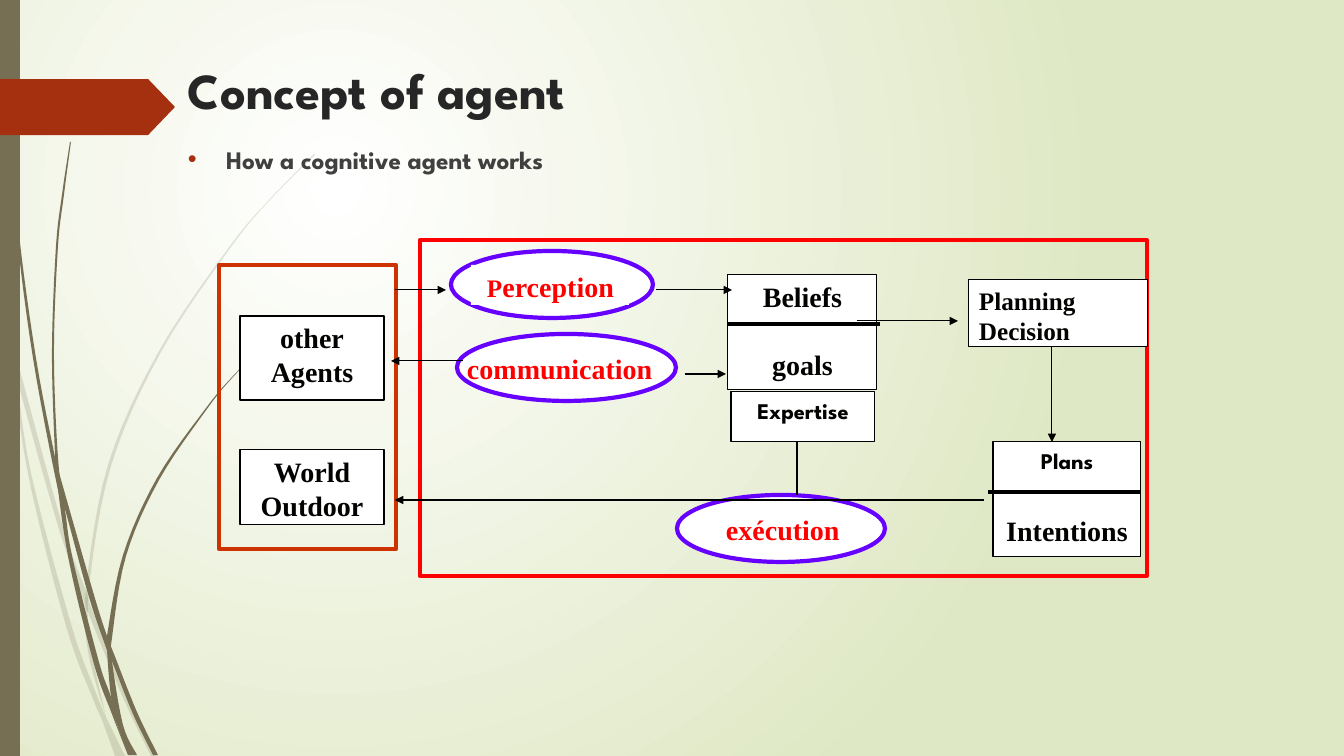
from lxml import etree
from pptx import Presentation
from pptx.dml.color import RGBColor
from pptx.enum.dml import MSO_THEME_COLOR
from pptx.enum.shapes import MSO_CONNECTOR, MSO_SHAPE
from pptx.enum.text import PP_ALIGN
from pptx.oxml.ns import qn
from pptx.util import Pt

RECT, OVAL, ARROW_TAB = MSO_SHAPE.RECTANGLE, MSO_SHAPE.OVAL, MSO_SHAPE.PENTAGON
STRAIGHT = MSO_CONNECTOR.STRAIGHT
LEFT, CENTER = PP_ALIGN.LEFT, PP_ALIGN.CENTER
PX = 914400 / 100.8
W, H = 1344, 756

SPARTAN, TIMES = "League Spartan", "Times New Roman"
THEME = {
    "colors": {
        "white": "FFFFFF", "sage": "DFE8C4", "olive": "766F54", "rust": "A53010",
        "title": "262626", "body": "404040", "ink": "020200", "black": "000000",
        "red": "FF0000", "orange": "CC3300", "violet": "6600FF",
    },
    "text": {  # font, points, colour
        "title": (SPARTAN, 36, "title"), "body": (SPARTAN, 18, "body"),
        "label": (SPARTAN, 16, "ink"), "node": (TIMES, 20, "ink"),
        "small": (TIMES, 18, "ink"), "action": (TIMES, 20, "red"),
        "initial": (TIMES, 18, "red"),
    },
    "thin": 0.75, "thick": 3,
}

# Grass blades: transparency-bearing opacity, then left and right edges
BLADES = [
    (20, [(0, 284), (9, 325), (14, 348), (62, 524), (86, 591), (93, 612), (128, 698), (156, 756)],
         [(0, 301), (10, 347), (17, 379), (58, 526), (85, 604), (89, 615), (124, 700), (151, 756)]),
    (20, [(11, 353), (28, 474), (66, 626), (93, 699), (102, 720), (115, 756)],
         [(17, 379), (31, 473), (71, 624), (94, 688), (106, 717), (125, 756)]),
    (20, [(314, 154), (270, 199), (230, 246), (159, 351), (108, 465), (86, 589), (88, 651), (106, 717)],
         [(315, 155), (270, 200), (231, 247), (161, 352), (111, 466), (89, 589), (92, 651), (106, 717)]),
    (100, [(3, 0), (4, 48), (7, 111), (17, 235), (33, 358), (57, 485), (65, 509), (89, 597), (107, 650),
           (112, 661), (133, 714), (153, 755)],
          [(4, 0), (5, 48), (8, 110), (19, 234), (36, 358), (55, 457), (60, 476), (94, 595), (107, 636),
           (114, 654), (137, 712), (158, 755)]),
    (100, [(70, 142), (62, 195), (56, 247), (52, 352), (55, 453), (57, 481), (69, 561), (94, 664),
           (112, 714), (128, 755)],
          [(71, 142), (64, 195), (58, 247), (54, 352), (58, 457), (65, 509), (73, 560), (99, 662),
           (111, 697), (118, 728), (132, 755)]),
    (100, [(262, 347), (233, 376), (206, 408), (157, 478), (123, 555), (107, 636), (107, 650), (111, 697),
           (118, 728), (131, 755)],
          [(263, 347), (233, 377), (207, 409), (159, 480), (126, 556), (112, 638), (112, 661), (123, 725),
           (137, 755)]),
]

# Preset, left, top, width, height, fill, line, line weight
BARE = [
    (RECT, 0, 0, 20, 756, "olive", None, None),
    (ARROW_TAB, 0, 79, 175, 56, "rust", None, None),
    (RECT, 420, 240, 727, 336, None, "red", "thick"),
    (RECT, 219, 265, 177, 284, None, "orange", "thick"),
    (OVAL, 451, 251, 202, 67, "white", "violet", "thick"),
    (OVAL, 457, 334, 219, 67, "white", "violet", "thick"),
    (OVAL, 677, 495, 208, 67, "white", "violet", "thick"),
]

# Left, top, width, height, left inset, fill, line, alignment,
# paragraphs of (points before, [(text, style)])
WORDED = [
    (178, 54, 983, 141, 10, None, None, LEFT, [(0, [("Concept of agent", "title")])]),
    (178, 139, 1101, 617, 10, None, None, LEFT, [(10, [("How a cognitive agent works", "body")])]),
    (471, 265, 158, 40, 16, "white", None, LEFT,
     [(0, [("P", "initial"), ("erception", "action")])]),
    (457, 347, 219, 40, 10, None, None, LEFT, [(0, [("communication", "action")])]),
    (711, 508, 140, 40, 15, "white", None, LEFT, [(0, [("exécution", "action")])]),
    (969, 280, 179, 67, 10, "white", "black", LEFT,
     [(0, [("Planning", "small")]), (0, [("Decision", "small")])]),
    (728, 275, 149, 115, 10, "white", "black", CENTER,
     [(0, [("Beliefs", "node")]), (24, [("goals", "node")])]),
    (993, 442, 148, 115, 10, "white", "black", CENTER,
     [(0, [("Plans", "label")]), (28, [("Intentions", "node")])]),
    (731, 392, 144, 50, 10, "white", "black", CENTER, [(0, [("Expertise", "label")])]),
    (240, 316, 144, 84, 10, "white", "black", CENTER,
     [(0, [("other", "node")]), (0, [("Agents", "node")])]),
    (240, 450, 144, 75, 10, "white", "black", CENTER,
     [(0, [("World", "node")]), (0, [("Outdoor", "node")])]),
]

# From x, from y, to x, to y, weight, arrowhead at the end
LINKS = [
    (797, 442, 797, 495, "thin", False),
    (857, 321, 958, 321, "thin", True),
    (463, 361, 391, 361, "thin", True),
    (1052, 347, 1052, 442, "thin", True),
    (685, 374, 726, 374, "thin", True),
    (728, 324, 880, 324, "thick", False),
    (988, 492, 1140, 492, "thick", False),
    (656, 290, 732, 290, "thin", True),
    (395, 290, 446, 290, "thin", True),
    (984, 500, 395, 500, "thin", True),
]


def px(*values):
    return [round(v * PX) for v in values]


def rgb(name):
    return RGBColor.from_string(THEME["colors"][name])


def add(parent, tag, **attrs):
    return etree.SubElement(parent, qn(tag), attrs)


def paint(shape, fill, line=None, weight="thin"):
    shape.shadow.inherit = False
    if fill:
        shape.fill.solid()
        shape.fill.fore_color.rgb = rgb(fill)
    else:
        shape.fill.background()
    if line:
        shape.line.color.rgb = rgb(line)
        shape.line.width = Pt(THEME[weight])
    else:
        shape.line.fill.background()


def smooth(points, steps=6):
    """Catmull-Rom curve through the points."""
    padded = [points[0], *points, points[-1]]
    curve = []
    for a, b, c, d in zip(padded, padded[1:], padded[2:], padded[3:]):
        for t in (i / steps for i in range(steps)):
            curve.append([
                q + t * (r - p + t * (2 * p - 5 * q + 4 * r - s + t * (3 * q - p - 3 * r + s))) / 2
                if t == 0 else
                (2 * q + t * (r - p) + t * t * (2 * p - 5 * q + 4 * r - s)
                 + t ** 3 * (3 * q - p - 3 * r + s)) / 2
                for p, q, r, s in zip(a, b, c, d)])
    return [px(*xy) for xy in [*curve, points[-1]]]


def write(tf, inset, align, paragraphs):
    tf.word_wrap = True
    tf.margin_left = px(inset)[0]
    for i, (before, runs) in enumerate(paragraphs):
        p = tf.paragraphs[0] if i == 0 else tf.add_paragraph()
        p.alignment, p.space_before = align, Pt(before)
        for text, style in runs:
            r = p.add_run()
            r.text = text
            font, size, color = THEME["text"][style]
            for key, value in {"name": font, "size": Pt(size), "bold": True}.items():
                setattr(r.font, key, value)
            r.font.color.rgb = rgb(color)
            if style == "body":
                pPr = p._p.get_or_add_pPr()
                indent = px(38)[0]
                pPr.set("marL", str(indent))
                pPr.set("indent", str(-indent))
                add(add(pPr, "a:buClr"), "a:srgbClr", val=THEME["colors"]["rust"])
                add(pPr, "a:buFont", typeface="Arial")
                add(pPr, "a:buChar", char="•")


def main():
    prs = Presentation()
    prs.slide_width, prs.slide_height = px(W, H)
    s = prs.slides.add_slide(prs.slide_layouts[6])

    # Radial background, centred a quarter of the way in
    fill = s.background.fill
    fill.gradient()
    for stop, name in zip(fill.gradient_stops, ("white", "sage")):
        stop.color.theme_color = MSO_THEME_COLOR.ACCENT_1
        stop.color.rgb = rgb(name)
    lin = next(s.element.iter(qn("a:lin")))
    radial = etree.Element(qn("a:path"), path="circle")
    add(radial, "a:fillToRect", l="50000", t="50000", r="100000", b="100000")
    lin.getparent().replace(lin, radial)

    # Grass blades
    for opacity, left, right in BLADES:
        outline = smooth(left) + smooth(right)[::-1]
        builder = s.shapes.build_freeform(*outline[0], scale=1.0)
        builder.add_line_segments(outline[1:], close=True)
        blade = builder.convert_to_shape()
        paint(blade, "olive")
        add(next(blade.element.spPr.iter(qn("a:srgbClr"))), "a:alpha", val=str(opacity * 1000))

    # Side bar, tab, frames and ovals
    for kind, x, y, w, h, fill, line, weight in BARE:
        sp = s.shapes.add_shape(kind, *px(x, y, w, h))
        paint(sp, fill, line, weight)
        if kind == ARROW_TAB:
            sp.adjustments[0] = 0.48

    # Headings and diagram labels
    for x, y, w, h, inset, fill, line, align, paragraphs in WORDED:
        sp = s.shapes.add_textbox(*px(x, y, w, h))
        paint(sp, fill, line)
        write(sp.text_frame, inset, align, paragraphs)

    # Dividers and arrows
    for x1, y1, x2, y2, weight, arrow in LINKS:
        link = s.shapes.add_connector(STRAIGHT, *px(x1, y1, x2, y2))
        link.line.color.rgb = rgb("black")
        link.line.width = Pt(THEME[weight])
        if arrow:
            add(link.line._get_or_add_ln(), "a:tailEnd", type="triangle")
        add(link._element.spPr, "a:effectLst")

    prs.save("out.pptx")


if __name__ == "__main__":
    main()
